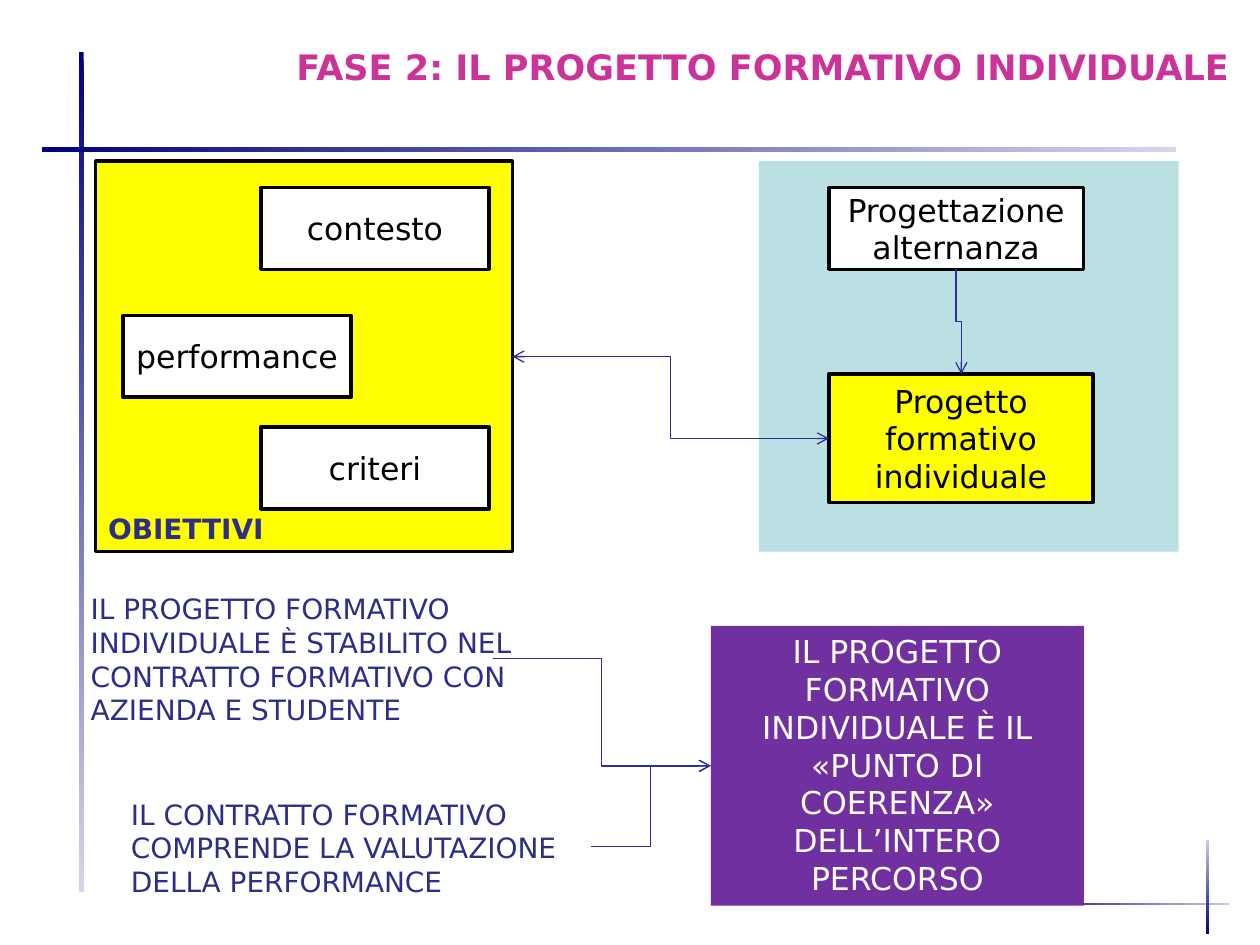
from lxml import etree
from pptx import Presentation
from pptx import util as u
from pptx.dml.color import RGBColor
from pptx.enum import shapes, text
from pptx.oxml.ns import qn

NAVY = RGBColor(0x00, 0x00, 0x80)
MIST = RGBColor(0xD5, 0xD5, 0xEA)
LILAC = RGBColor(0xCB, 0xCB, 0xE5)
TEAL = RGBColor(0xBB, 0xE0, 0xE3)
YELLOW = RGBColor(0xFF, 0xFF, 0x00)
PURPLE = RGBColor(0x70, 0x30, 0xA0)
PINK = RGBColor(0xCC, 0x33, 0x99)
INDIGO = RGBColor(0x2D, 0x2D, 0x8A)
BLUE = RGBColor(0x2F, 0x2F, 0x98)
WHITE = RGBColor(0xFF, 0xFF, 0xFF)
BLACK = RGBColor(0x00, 0x00, 0x00)
FONT = "DejaVu Sans"
LEFT, MID = text.PP_ALIGN.LEFT, text.PP_ALIGN.CENTER
ANCHOR = text.MSO_ANCHOR


def write(shape, words, size, color, align=LEFT, anchor=ANCHOR.TOP, bold=False):
    frame = shape.text_frame
    frame.word_wrap = True
    frame.auto_size = text.MSO_AUTO_SIZE.NONE
    frame.vertical_anchor = anchor
    par = frame.paragraphs[0]
    par.alignment = align
    run = par.add_run()
    run.text = words
    run.font.name = FONT
    run.font.size = u.Pt(size)
    run.font.bold = bold
    run.font.color.rgb = color


def block(home, place, fill, edge=True):
    shape = home.add_shape(shapes.MSO_SHAPE.RECTANGLE, *map(u.Cm, place))
    shape.shadow.inherit = False
    shape.fill.solid()
    shape.fill.fore_color.rgb = fill
    if edge:
        shape.line.color.rgb = BLACK
        shape.line.width = u.Pt(2)
    else:
        shape.line.fill.background()
    return shape


deck = Presentation()
deck.slide_width, deck.slide_height = u.Cm(25.4), u.Cm(19.05)
slide = deck.slides.add_slide(deck.slide_layouts[5])
items = slide.shapes

for place, start, end, angle in [
    ((1.59, 1.05, 0.1, 16.93), NAVY, MIST, 270),
    ((20.32, 18.2, 4.45, 0.05), NAVY, LILAC, 0),
    ((24.32, 16.93, 0.05, 1.9), LILAC, NAVY, 270),
    ((0.85, 2.97, 22.86, 0.1), NAVY, MIST, 0),
]:
    bar = block(items, place, NAVY, False)
    bar.fill.gradient()
    bar.fill.gradient_angle = angle
    for stop, color in zip(bar.fill.gradient_stops, (start, end)):
        stop.color.rgb = color

title = items.title
title.left, title.top, title.width, title.height = map(u.Cm, (5.36, 0.79, 20.04, 1.11))
write(title, "FASE 2: IL PROGETTO FORMATIVO INDIVIDUALE", 20, PINK, MID, bold=True)

block(items, (15.3, 3.25, 8.46, 7.87), TEAL, False)
group = items.add_group_shape().shapes
goals = block(group, (1.93, 3.25, 8.4, 7.87), YELLOW)
write(goals, "OBIETTIVI", 16, INDIGO, anchor=ANCHOR.BOTTOM, bold=True)

for home, words, place, fill in [
    (group, "contesto", (5.26, 3.78, 4.6, 1.65), WHITE),
    (group, "performance", (2.48, 6.36, 4.6, 1.65), WHITE),
    (group, "criteri", (5.26, 8.61, 4.6, 1.65), WHITE),
    (items, "Progettazione alternanza", (16.71, 3.78, 5.13, 1.65), WHITE),
    (items, "Progetto formativo individuale", (16.71, 7.54, 5.33, 2.59), YELLOW),
]:
    write(block(home, place, fill), words, 18, BLACK, MID, ANCHOR.MIDDLE)

point = block(items, (14.33, 12.62, 7.52, 5.64), PURPLE, False)
write(point, "IL PROGETTO FORMATIVO INDIVIDUALE È IL «PUNTO DI COERENZA» DELL’INTERO PERCORSO",
      18, WHITE, MID)

for words, place in [
    ("IL PROGETTO FORMATIVO INDIVIDUALE È STABILITO NEL CONTRATTO FORMATIVO CON AZIENDA E STUDENTE",
     (1.58, 11.81, 9.45, 3)),
    ("IL CONTRATTO FORMATIVO COMPRENDE LA VALUTAZIONE DELLA PERFORMANCE",
     (2.39, 15.95, 9.8, 2.31)),
]:
    write(items.add_textbox(*map(u.Cm, place)), words, 16, INDIGO)

for ends, turn, tips in [
    ((10.33, 7.19, 16.71, 8.84), 0, ("headEnd", "tailEnd")),
    ((20.38, 6.43, 18.27, 6.54), 270, ("tailEnd",)),
    ((9.93, 13.28, 14.33, 15.44), 0, ("tailEnd",)),
    ((11.91, 17.07, 14.33, 15.44), 0, ("tailEnd",)),
]:
    link = items.add_connector(shapes.MSO_CONNECTOR.ELBOW, *map(u.Cm, ends))
    link.line.color.rgb = BLUE
    link.line.width = u.Pt(0.75)
    props = link._element.spPr
    if turn:
        props.find(qn("a:xfrm")).set("rot", str(turn * 60000))
    for tip in tips:
        etree.SubElement(props.find(qn("a:ln")), qn("a:" + tip), type="arrow")
    etree.SubElement(props, qn("a:effectLst"))

deck.save("out.pptx")
